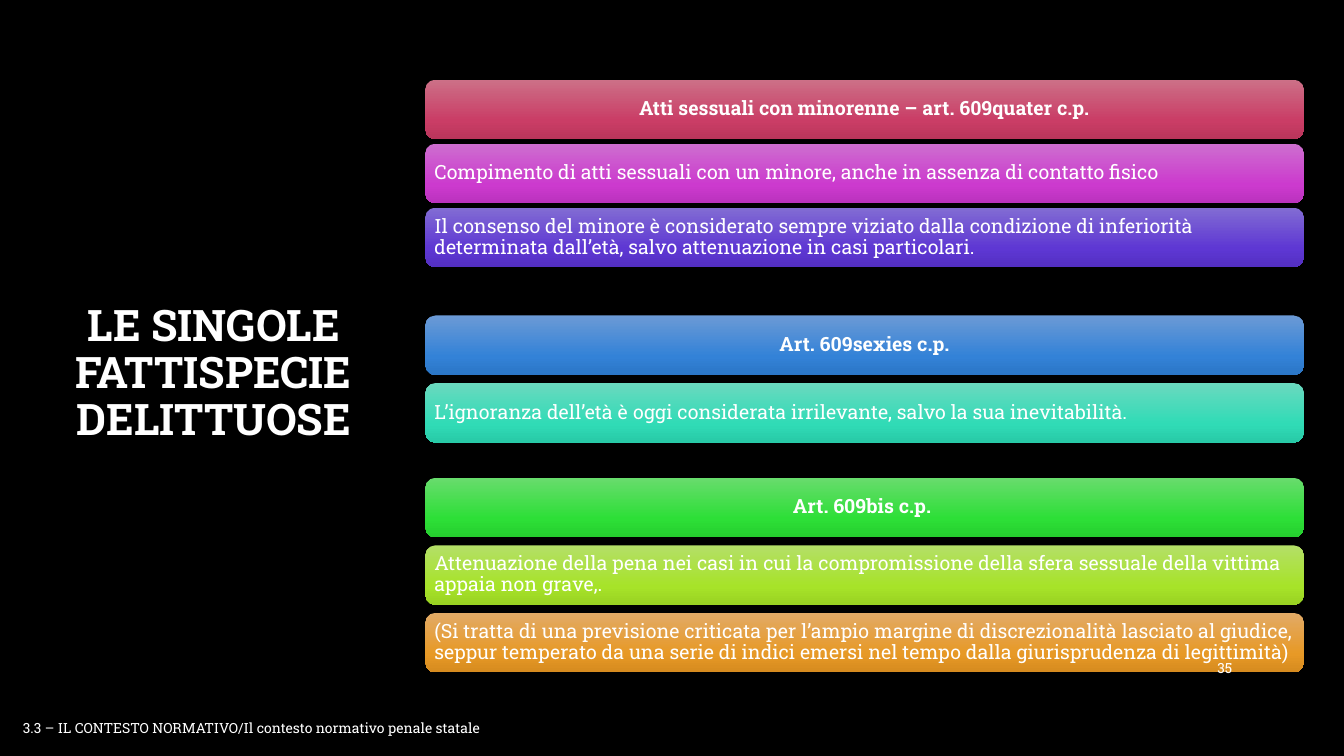
from pptx import Presentation
from pptx.dml.color import RGBColor
from pptx.enum.shapes import MSO_SHAPE
from pptx.enum.text import MSO_ANCHOR, PP_ALIGN
from pptx.oxml import parse_xml
from pptx.oxml.ns import nsdecls, qn
from pptx.util import Inches, Pt

# Content
TITLE = "LE SINGOLE FATTISPECIE DELITTUOSE"
PAGE = "35"
FOOTER = "3.3 – IL CONTESTO NORMATIVO/Il contesto normativo penale statale"

# Each offence: top, distance between bars, then (text, gradient name) with the heading first
OFFENCES = [
    (0.79, 0.635, [
        ("Atti sessuali con minorenne – art. 609quater c.p.", "rose"),
        ("Compimento di atti sessuali con un minore, anche in assenza di contatto fisico", "magenta"),
        ("Il consenso del minore è considerato sempre viziato dalla condizione di inferiorità "
         "determinata dall’età, salvo attenuazione in casi particolari.", "violet"),
    ]),
    (3.13, 0.67, [
        ("Art. 609sexies c.p.", "blue"),
        ("L’ignoranza dell’età è oggi considerata irrilevante, salvo la sua inevitabilità.", "teal"),
    ]),
    (4.74, 0.67, [
        ("Art. 609bis c.p. ", "green"),
        ("Attenuazione della pena nei casi in cui la compromissione della sfera sessuale "
         "della vittima appaia non grave,.", "lime"),
        ("(Si tratta di una previsione criticata per l’ampio margine di discrezionalità lasciato "
         "al giudice, seppur temperato da una serie di indici emersi nel tempo dalla "
         "giurisprudenza di legittimità)", "orange"),
    ]),
]

# Style
FONT = "Roboto Slab"
COLORS = {"background": "000000", "text": "FFFFFF"}
GRADIENTS = {
    "rose": ("CC7087", "CA3D66", "BA355B"),
    "magenta": ("CD6ECF", "CC3ACE", "BB32BE"),
    "violet": ("826CD3", "5E37D3", "532FC2"),
    "blue": ("6B9AD6", "3382D7", "2B76C6"),
    "teal": ("6AD9BF", "30DBB6", "28CAA7"),
    "green": ("68DC6D", "2DDF37", "25CE2E"),
    "lime": ("B4DF67", "A7E329", "99D222"),
    "orange": ("E2AA66", "E79926", "D68B1F"),
}
STOPS = (0, 69, 100)
BAR_LEFT, BAR_WIDTH, BAR_HEIGHT, BAR_INSET = 4.22, 8.71, 0.59, 0.06


def write(holder, text, size, bold=False, align=PP_ALIGN.LEFT, spacing=1.0,
          anchor=MSO_ANCHOR.MIDDLE):
    frame = holder.text_frame
    frame.word_wrap = True
    frame.vertical_anchor = anchor
    paragraph = frame.paragraphs[0]
    paragraph.text = text
    paragraph.alignment = align
    paragraph.line_spacing = spacing
    paragraph.font.name = FONT
    paragraph.font.size = Pt(size)
    paragraph.font.bold = bold
    paragraph.font.color.rgb = RGBColor.from_string(COLORS["text"])


def shade(bar, gradient):
    """Fill a bar from top to bottom with three colour stops."""
    bar.fill.gradient()
    bar.fill.gradient_angle = 270
    stop_list = bar._element.spPr.find(".//" + qn("a:gsLst"))
    for stop in list(stop_list):
        stop_list.remove(stop)
    for percent, color in zip(STOPS, gradient):
        stop_list.append(parse_xml(
            f'<a:gs {nsdecls("a")} pos="{percent * 1000}"><a:srgbClr val="{color}"/></a:gs>'))


def add_bar(slide, top, text, gradient, heading):
    bar = slide.shapes.add_shape(
        MSO_SHAPE.ROUNDED_RECTANGLE, Inches(BAR_LEFT), Inches(top),
        Inches(BAR_WIDTH), Inches(BAR_HEIGHT))
    bar.shadow.inherit = False
    bar.line.fill.background()
    shade(bar, gradient)
    frame = bar.text_frame
    frame.margin_left = frame.margin_right = Inches(BAR_INSET)
    frame.margin_top = frame.margin_bottom = Inches(BAR_INSET)
    write(bar, text, 14, heading, PP_ALIGN.CENTER if heading else PP_ALIGN.LEFT, 0.9)


def main():
    deck = Presentation()
    deck.slide_width, deck.slide_height = Inches(13.33), Inches(7.5)
    slide = deck.slides.add_slide(deck.slide_layouts[5])
    background = slide.background.fill
    background.solid()
    background.fore_color.rgb = RGBColor.from_string(COLORS["background"])

    # Title
    title = slide.shapes.title
    title.left, title.top = Inches(0.13), Inches(0.65)
    title.width, title.height = Inches(3.98), Inches(6.13)
    write(title, TITLE, 31, True, PP_ALIGN.CENTER, 0.9)

    # Offence bars
    for top, step, bars in OFFENCES:
        for row, (text, color) in enumerate(bars):
            add_bar(slide, top + row * step, text, GRADIENTS[color], heading=row == 0)

    # Page number and footer
    page = slide.shapes.add_textbox(Inches(11.5), Inches(6.43), Inches(0.82), Inches(0.4))
    write(page, PAGE, 10, align=PP_ALIGN.RIGHT)
    footer = slide.shapes.add_textbox(Inches(0.13), Inches(7.09), Inches(6.67), Inches(0.27))
    write(footer, FOOTER, 10, anchor=MSO_ANCHOR.TOP)

    deck.save("out.pptx")


if __name__ == "__main__":
    main()
